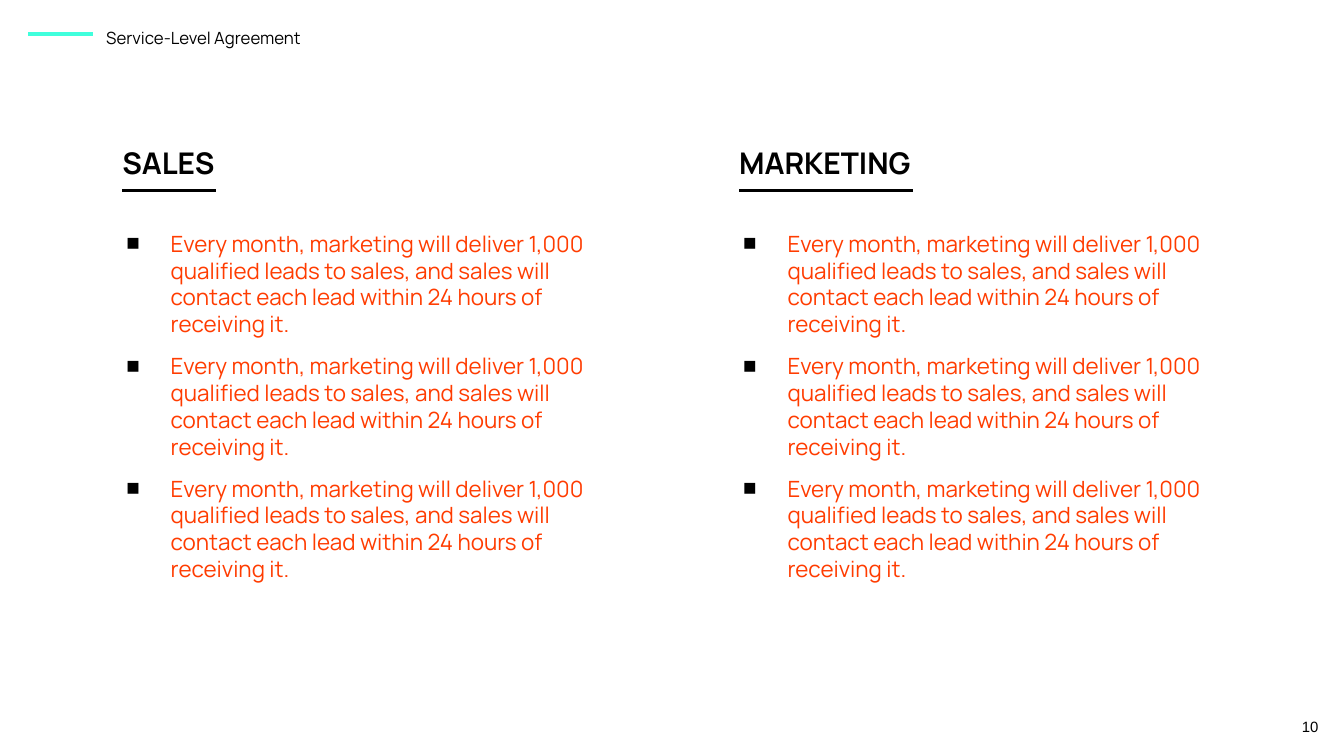
"""Build the service-level agreement slide with a sales and a marketing column."""
from lxml.etree import SubElement
from pptx import Presentation
from pptx.dml.color import RGBColor
from pptx.enum.shapes import MSO_CONNECTOR
from pptx.enum.text import MSO_ANCHOR, MSO_AUTO_SIZE, PP_ALIGN
from pptx.oxml.ns import qn
from pptx.util import Inches, Pt

BLACK = RGBColor(0x00, 0x00, 0x00)
ORANGE = RGBColor(0xFF, 0x3C, 0x00)
MINT = RGBColor(0x40, 0xFF, 0xDC)

TITLE = "Service-Level Agreement"
PAGE = "10"
PROMISE = ("Every month, marketing will deliver 1,000 qualified leads to sales, "
           "and sales will contact each lead within 24 hours of receiving it.")
COLUMNS = [
    {"heading": "SALES", "left": 0.67, "width": 1.27, "rule": 0.7, "items": [PROMISE] * 3},
    {"heading": "MARKETING", "left": 5.26, "width": 1.68, "rule": 1.29, "items": [PROMISE] * 3},
]


def set_bullet(p, char):
    pPr = p._p.get_or_add_pPr()
    pPr.set("marL", str(Inches(0.5) if char else 0))
    pPr.set("indent", str(Inches(-0.33) if char else 0))
    if char:
        SubElement(SubElement(pPr, qn("a:buClr")), qn("a:srgbClr")).set("val", str(BLACK))
        SubElement(pPr, qn("a:buChar")).set("char", char)
    else:
        SubElement(pPr, qn("a:buNone"))


def write(sp, box, lines, size, color=BLACK, font="Manrope", bold=False, bullet=None,
          align=PP_ALIGN.LEFT, anchor=MSO_ANCHOR.TOP, spacing=1.0, gap=0):
    sp.left, sp.top, sp.width, sp.height = (Inches(v) for v in box)
    tf = sp.text_frame
    tf.word_wrap = True
    tf.auto_size = MSO_AUTO_SIZE.NONE
    tf.vertical_anchor = anchor
    tf.margin_left = tf.margin_right = tf.margin_top = tf.margin_bottom = Inches(0.1)
    for i, line in enumerate(lines):
        p = tf.add_paragraph() if i else tf.paragraphs[0]
        set_bullet(p, bullet)
        p.alignment = align
        p.line_spacing = spacing
        p.space_before = Pt(gap if i else 0)
        p.space_after = Pt(gap if i == len(lines) - 1 else 0)
        r = p.add_run()
        r.text = line
        r.font.name, r.font.size, r.font.bold = font, Pt(size), bold
        r.font.color.rgb = color


def add_rule(s, left, top, width, color, weight):
    line = s.shapes.add_connector(MSO_CONNECTOR.STRAIGHT, Inches(left), Inches(top),
                                  Inches(left + width), Inches(top))
    line.line.color.rgb = color
    line.line.width = Pt(weight)
    SubElement(line._element.spPr, qn("a:effectLst"))


def main():
    prs = Presentation()
    prs.slide_width = Inches(10)
    prs.slide_height = prs.slide_width * 9 // 16
    s = prs.slides.add_slide(prs.slide_layouts.get_by_name("Comparison"))
    title, *bodies = s.placeholders

    write(title, (0.69, 0.08, 4.03, 0.32), [TITLE], 9, spacing=1.15)
    add_rule(s, 0.21, 0.25, 0.48, MINT, 2.25)
    for col, head, body in zip(COLUMNS, bodies[::2], bodies[1::2]):
        left = col["left"]
        write(head, (left + 0.14, 1.05, col["width"], 0.32), [col["heading"]], 16,
              bold=True, anchor=MSO_ANCHOR.MIDDLE)
        add_rule(s, left + 0.24, 1.42, col["rule"], BLACK, 1.5)
        write(body, (left, 1.61, 4.03, 3.16), col["items"], 12, color=ORANGE,
              bullet="■", gap=8)
    write(s.shapes.add_textbox(0, 0, 0, 0), (9.31, 5.19, 0.6, 0.43), [PAGE], 8,
          font="Arial", align=PP_ALIGN.RIGHT, anchor=MSO_ANCHOR.MIDDLE)
    prs.save("out.pptx")


if __name__ == "__main__":
    main()
